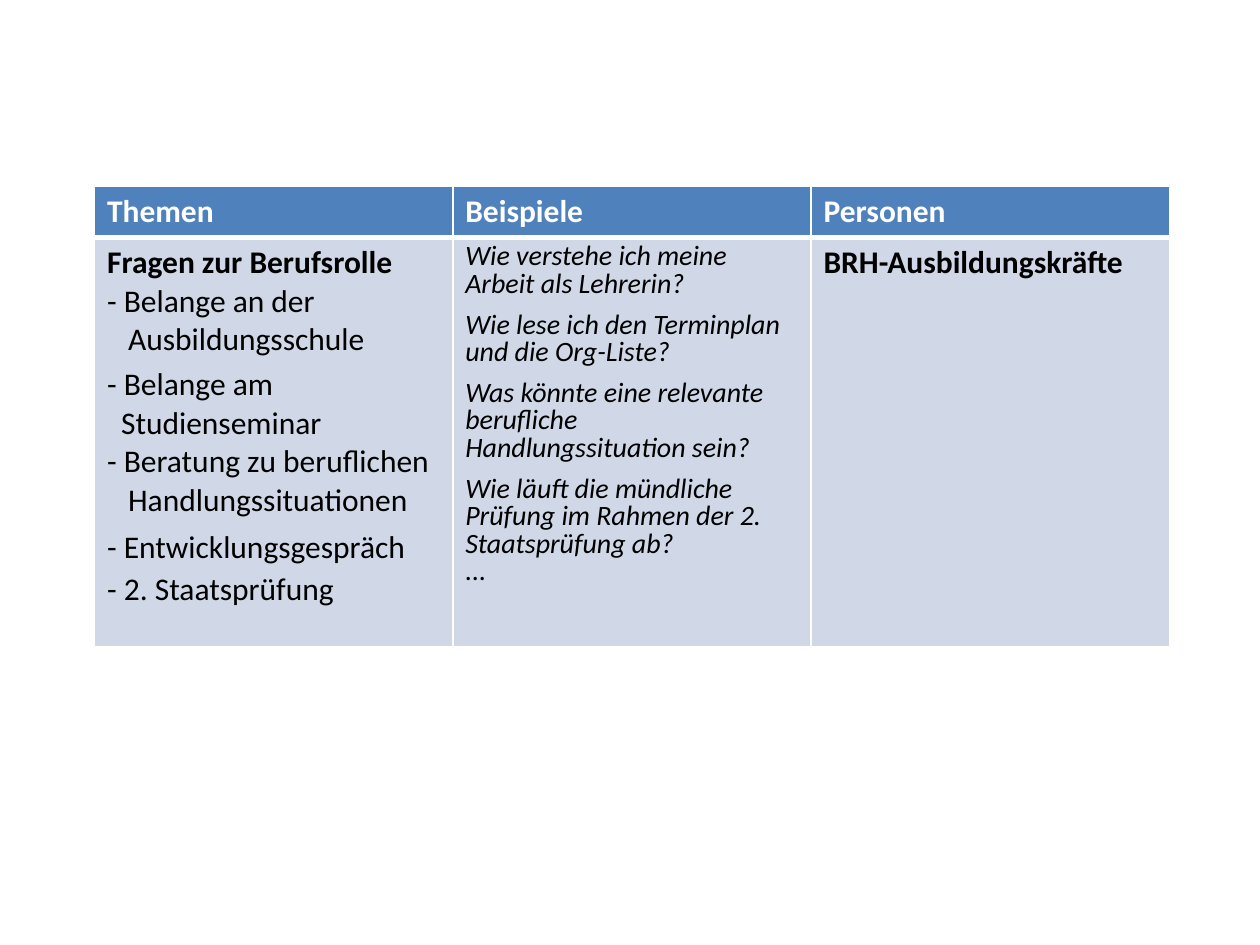
import pptx
import pptx.util
import pptx.dml.color
import pptx.oxml
import pptx.oxml.ns

Pt = pptx.util.Pt
Inches = pptx.util.Inches
RGBColor = pptx.dml.color.RGBColor

WHITE = RGBColor(0xFF, 0xFF, 0xFF)
BLACK = RGBColor(0, 0, 0)
BLUE = RGBColor(0x4F, 0x81, 0xBD)
PALE = RGBColor(0xD0, 0xD8, 0xE8)

FONT = "Calibri"
LEFT, TOP, WIDTH = 0.75, 1.48, 8.53
ROW_HEIGHTS = [0.4, 3.25]

HEADERS = ["Themen", "Beispiele", "Personen"]
TOPICS = [
    ("Fragen zur Berufsrolle", {"bold": True}),
    ("- Belange an der", {}),
    ("Ausbildungsschule", {"indent": 12}),
    ("- Belange am", {"before": 3.7}),
    ("Studienseminar", {"indent": 8}),
    ("- Beratung zu beruflichen", {}),
    ("Handlungssituationen", {"indent": 12}),
    ("- Entwicklungsgespräch", {"before": 4.9}),
    ("- 2. Staatsprüfung", {"spacing": 1.1}),
]
QUESTIONS = [
    "Wie verstehe ich meine Arbeit als Lehrerin?",
    "Wie lese ich den Terminplan und die Org-Liste?",
    "Was könnte eine relevante berufliche Handlungssituation sein?",
    "Wie läuft die mündliche Prüfung im Rahmen der 2. Staatsprüfung ab?",
]
QUESTION_STYLE = {"size": 16, "italic": True, "spacing": 0.8}
PEOPLE = [("BRH-Ausbildungskräfte", {"bold": True})]


def add_paragraph(p, text, color, size=18, bold=False, italic=False,
                  indent=0, before=0, after=0, spacing=1.0):
    p.text = text
    p.line_spacing = spacing
    p.space_before, p.space_after = Pt(before), Pt(after)
    if indent:
        p._p.get_or_add_pPr().set("marL", str(Pt(indent)))
    for r in p.runs:
        r.font.name, r.font.size = FONT, Pt(size)
        r.font.bold, r.font.italic = bold, italic
        r.font.color.rgb = color


def set_borders(cell, **widths):
    tcPr = cell._tc.get_or_add_tcPr()
    for i, side in enumerate(("L", "R", "T", "B")):
        tcPr.insert(i, pptx.oxml.parse_xml(
            f'<a:ln{side} {pptx.oxml.ns.nsdecls("a")} w="{Pt(widths.get(side, 1))}">'
            f'<a:solidFill><a:srgbClr val="{WHITE}"/></a:solidFill></a:ln{side}>'))


def fill_cell(cell, lines, fill, color, **borders):
    tf = cell.text_frame
    for i, (text, style) in enumerate(lines):
        p = tf.add_paragraph() if i else tf.paragraphs[0]
        add_paragraph(p, text, color, **style)
    cell.fill.solid()
    cell.fill.fore_color.rgb = fill
    set_borders(cell, **borders)


def add_topic_table(s):
    table = s.shapes.add_table(
        len(ROW_HEIGHTS), len(HEADERS), Inches(LEFT), Inches(TOP),
        Inches(WIDTH), Inches(sum(ROW_HEIGHTS))).table
    for row, height in zip(table.rows, ROW_HEIGHTS):
        row.height = Inches(height)
    last = len(QUESTIONS) - 1
    questions = [(q, {**QUESTION_STYLE, "after": 7.8 if i < last else 0})
                 for i, q in enumerate(QUESTIONS)]
    questions.append(("...", QUESTION_STYLE))
    for col, (header, lines) in enumerate(zip(HEADERS, (TOPICS, questions, PEOPLE))):
        fill_cell(table.cell(0, col), [(header, {"bold": True})], BLUE, WHITE, B=3)
        fill_cell(table.cell(1, col), lines, PALE, BLACK, T=3)


def main():
    prs = pptx.Presentation()
    prs.slide_width, prs.slide_height = Inches(10), Inches(7.5)
    s = prs.slides.add_slide(prs.slide_layouts[6])
    add_topic_table(s)
    prs.save("out.pptx")


if __name__ == "__main__":
    main()
